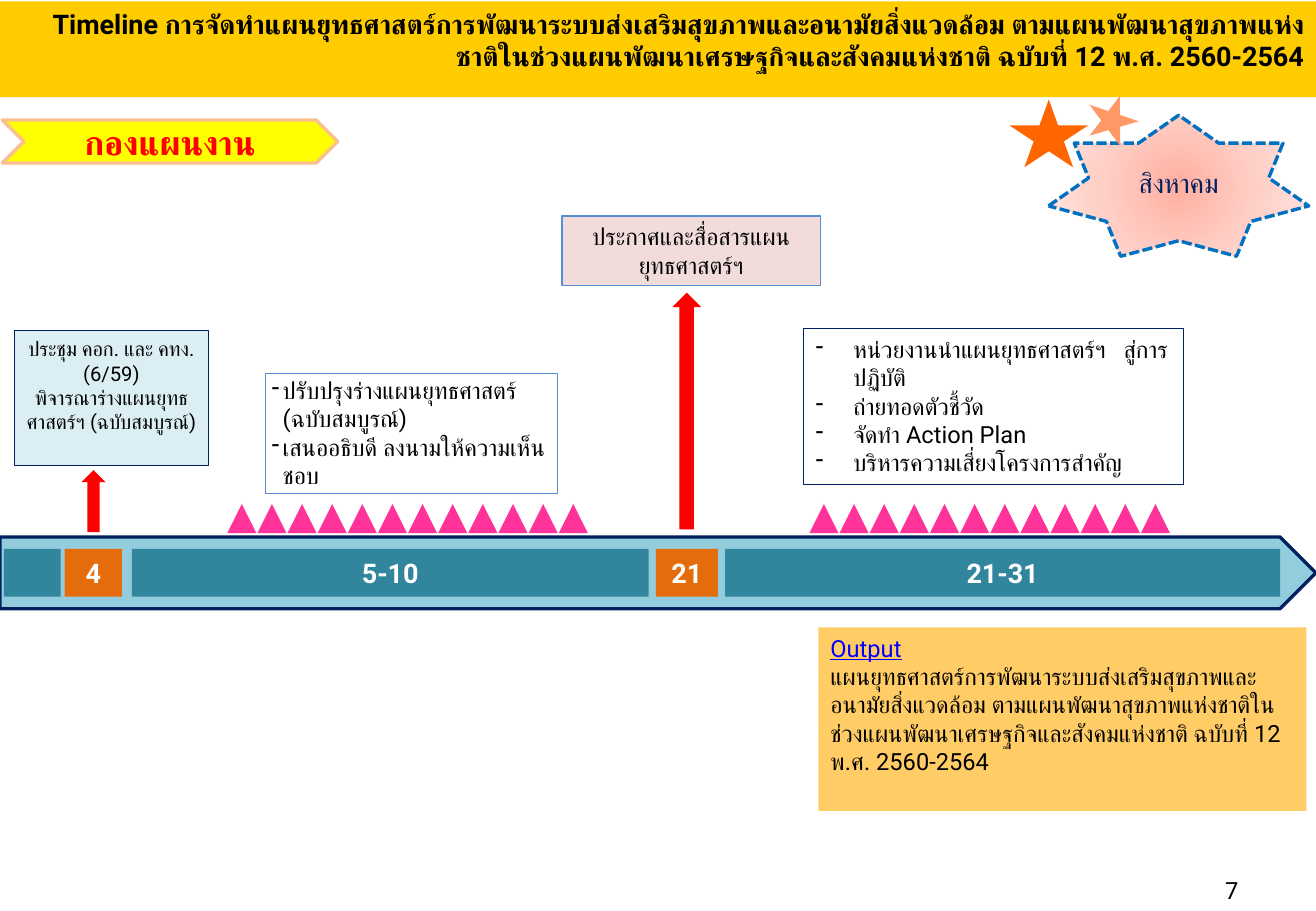
from pptx import Presentation
from pptx.dml.color import RGBColor
from pptx.enum.dml import MSO_LINE
from pptx.enum.shapes import MSO_SHAPE as Kind
from pptx.enum.text import MSO_ANCHOR as Anchor, MSO_AUTO_SIZE as AutoSize, PP_ALIGN as Align
from pptx.oxml import parse_xml
from pptx.oxml.ns import nsdecls
from pptx.oxml.xmlchemy import OxmlElement
from pptx.util import Cm, Pt

rgb = RGBColor.from_string


def write(shape, text, size=14, color="000000", bold=False, align=Align.CENTER,
          anchor=Anchor.MIDDLE, inset=(0.25, 0.13), hanging=None):
    frame = shape.text_frame
    frame.text = text
    frame.word_wrap = True
    frame.auto_size = AutoSize.NONE
    frame.vertical_anchor = anchor
    frame.margin_left = frame.margin_right = Cm(inset[0])
    frame.margin_top = frame.margin_bottom = Cm(inset[1])
    for paragraph in frame.paragraphs:
        paragraph.alignment = align
        if hanging:
            props = paragraph._p.get_or_add_pPr()
            props.set("marL", str(Cm(hanging)))
            props.set("indent", str(-Cm(hanging)))
            bullet = OxmlElement("a:buChar")
            bullet.set("char", "-")
            props.append(bullet)
        for run in paragraph.runs:
            run.font.name = "Roboto"
            run.font.size = Pt(size)
            run.font.bold = bold
            run.font.color.rgb = rgb(color)
            complex_script = OxmlElement("a:cs")
            complex_script.set("typeface", "Roboto")
            run._r.get_or_add_rPr().append(complex_script)


def draw(parent, kind, left, top, width, height, fill=None, line=None, weight=0.75):
    shape = parent.shapes.add_shape(kind, Cm(left), Cm(top), Cm(width), Cm(height))
    shape.shadow.inherit = False
    if fill:
        shape.fill.solid()
        shape.fill.fore_color.rgb = rgb(fill)
    else:
        shape.fill.background()
    if line:
        shape.line.color.rgb = rgb(line)
        shape.line.width = Pt(weight)
    else:
        shape.line.fill.background()
    return shape


deck = Presentation()
deck.slide_width, deck.slide_height = Cm(27.51), Cm(19.05)
slide = deck.slides.add_slide(deck.slide_layouts[5])
plan = ("แผนยุทธศาสตร์การพัฒนาระบบส่งเสริมสุขภาพและอนามัยสิ่งแวดล้อม "
        "ตามแผนพัฒนาสุขภาพแห่งชาติในช่วงแผนพัฒนาเศรษฐกิจและสังคมแห่งชาติ "
        "ฉบับที่ 12 พ.ศ. 2560-2564")

title = slide.shapes.title
title.left, title.top, title.width, title.height = Cm(0), Cm(0.03), Cm(27.51), Cm(2)
title.fill.solid()
title.fill.fore_color.rgb = rgb("FFCC00")
write(title, "Timeline การจัดทำ" + plan, size=16, bold=True, align=Align.RIGHT,
      anchor=Anchor.TOP)

meeting = draw(slide, Kind.RECTANGLE, 0.3, 6.91, 4.06, 2.82, "DBEEF4", "002060")
write(meeting, "ประชุม คอก. และ คทง. (6/59)\nพิจารณาร่างแผนยุทธศาสตร์ฯ (ฉบับสมบูรณ์)",
      size=12, anchor=Anchor.TOP)

rollout = draw(slide, Kind.RECTANGLE, 16.8, 6.87, 7.95, 3.26, "FFFFFF", "002060")
write(rollout, "หน่วยงานนำแผนยุทธศาสตร์ฯ   สู่การปฏิบัติ\nถ่ายทอดตัวชี้วัด\n"
      "จัดทำ Action Plan\nบริหารความเสี่ยงโครงการสำคัญ",
      align=Align.LEFT, anchor=Anchor.TOP, hanging=0.79)

timeline = slide.shapes.add_group_shape()
draw(timeline, Kind.PENTAGON, 0, 11.23, 27.51, 1.5, "93CDDD", "002060", 2)
for days, left, width, fill in [
    ("", 0.08, 1.19, "31859C"),
    ("4", 1.35, 1.2, "E46C0A"),
    ("5-10", 2.76, 10.8, "31859C"),
    ("21", 13.71, 1.3, "E46C0A"),
    ("21-31", 15.16, 11.6, "31859C"),
]:
    period = draw(timeline, Kind.RECTANGLE, left, 11.48, width, 1, fill)
    if days:
        write(period, days, size=16, color="FFFFFF", bold=True)

for left, top, width, height in [(1.7, 9.83, 0.51, 1.3), (14.05, 6.12, 0.61, 4.95)]:
    draw(slide, Kind.UP_ARROW, left, top, width, height, "FF0000")

month = draw(slide, Kind.STAR_7_POINT, 21.92, 2.41, 5.44, 2.95, line="0070C0", weight=2)
month.line.dash_style = MSO_LINE.SQUARE_DOT
glow = parse_xml(
    f'<a:gradFill {nsdecls("a")} rotWithShape="1"><a:gsLst>'
    '<a:gs pos="0"><a:srgbClr val="FFAFA0"/></a:gs>'
    '<a:gs pos="50000"><a:srgbClr val="FFCEC5"/></a:gs>'
    '<a:gs pos="100000"><a:srgbClr val="FFE7E3"/></a:gs></a:gsLst>'
    '<a:path path="circle"><a:fillToRect l="50000" t="50000" r="50000" b="50000"/></a:path>'
    '</a:gradFill>')
no_fill = month._element.spPr.find("{*}noFill")
month._element.spPr.replace(no_fill, glow)
write(month, "สิงหาคม", size=16, color="002060")

division = draw(slide, Kind.CHEVRON, 0.05, 2.51, 7.01, 0.9, "FFFF00", "FAC090", 2)
write(division, "กองแผนงาน", size=20, color="FF0000", bold=True)

draw(slide, Kind.STAR_5_POINT, 21.1, 2.08, 1.65, 1.42, "FF6600")
small_star = draw(slide, Kind.STAR_5_POINT, 22.71, 1.98, 1.09, 0.99, "FF9966")
small_star.rotation = 18.5

output = draw(slide, Kind.RECTANGLE, 17.11, 13.12, 10.2, 3.84, "FFCC66")
write(output, "Output\n" + plan, align=Align.LEFT, anchor=Anchor.TOP)
heading = output.text_frame.paragraphs[0].runs[0].font
heading.underline = True
heading.color.rgb = rgb("0000FF")

announcement = draw(slide, Kind.RECTANGLE, 11.75, 4.52, 5.4, 1.45, "F2DCDB", "558ED5")
write(announcement, "ประกาศและสื่อสารแผนยุทธศาสตร์ฯ", anchor=Anchor.TOP)

revision = draw(slide, Kind.RECTANGLE, 5.55, 7.81, 6.1, 2.51, line="558ED5")
write(revision, "ปรับปรุงร่างแผนยุทธศาสตร์ (ฉบับสมบูรณ์)\nเสนออธิบดี ลงนามให้ความเห็นชอบ",
      align=Align.LEFT, anchor=Anchor.TOP, inset=(0.13, 0.05), hanging=0.23)

page_number = slide.shapes.add_textbox(Cm(19.71), Cm(18.11), Cm(6.43), Cm(1.02))
write(page_number, "7", align=Align.RIGHT)

for start in (4.75, 16.92):
    working_days = slide.shapes.add_group_shape()
    for day in range(12):
        draw(working_days, Kind.ISOSCELES_TRIANGLE, start + 0.63 * day, 10.54, 0.61, 0.61, "FF3399")

deck.save("out.pptx")
